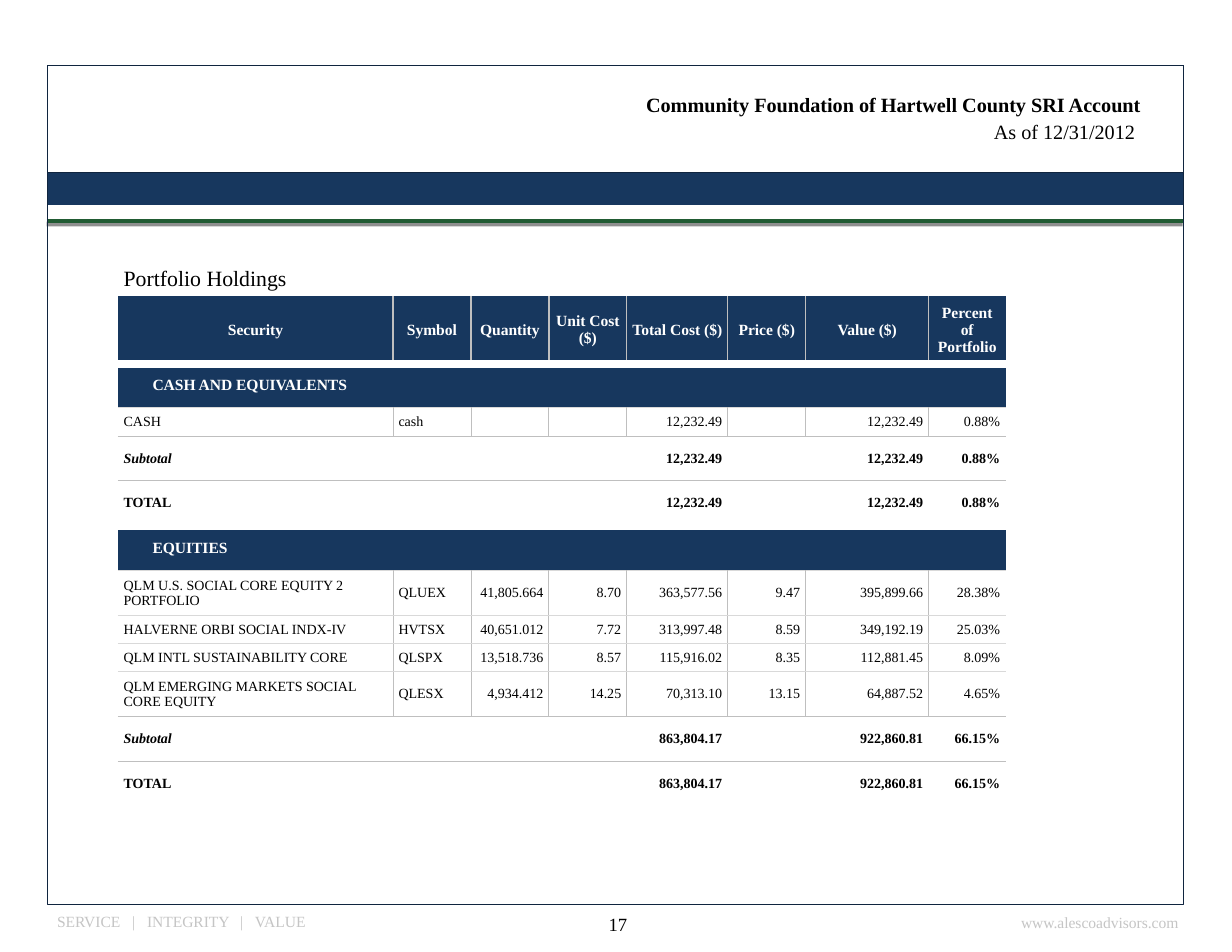
import pptx
import pptx.util
import pptx.dml.color
import pptx.enum.shapes
import pptx.enum.text
import pptx.oxml.ns
import lxml.etree

RGB = pptx.dml.color.RGBColor
ALIGN = pptx.enum.text.PP_ALIGN
ANCHOR = pptx.enum.text.MSO_ANCHOR
qn = pptx.oxml.ns.qn

NAVY = RGB(0x17, 0x37, 0x5E)
FRAME = RGB(0x10, 0x25, 0x3F)
GREEN = RGB(0x21, 0x5B, 0x33)
GREY = RGB(0xBF, 0xBF, 0xBF)
PALE = RGB(0xD9, 0xD9, 0xD9)
FOOTER = RGB(0xC5, 0xC5, 0xC5)
WHITE = RGB(0xFF, 0xFF, 0xFF)
BLACK = RGB(0, 0, 0)
FONT = "Times New Roman"

# Content: text, box (left, top, width, height), size, colour, bold, alignment, wrap
TEXTS = [
    ("As of 12/31/2012 ", (724, 114, 427, 36), 13, BLACK, False, ALIGN.RIGHT, True),
    ("17", (474, 907, 288, 50), 12, BLACK, False, ALIGN.CENTER, True),
    ("www.alescoadvisors.com", (1010, 907, 181, 30), 10, FOOTER, False, ALIGN.LEFT, False),
    ("SERVICE\t|\tINTEGRITY\t|\tVALUE", (46, 906, 276, 30), 10, FOOTER, False, ALIGN.LEFT, True),
    ("Community Foundation of Hartwell County SRI Account", (325, 87, 826, 36), 13, BLACK, True,
     ALIGN.RIGHT, True),
]
FOOTER_TABS = [75, 90, 183, 198]

# Rows: kind, height, values (Security, Symbol, Quantity, Unit Cost, Total Cost, Price, Value, Percent)
ROWS = [
    ("title", 37, ["Portfolio Holdings"]),
    ("header", 67, ["Security", "Symbol", "Quantity", "Unit Cost ($)", "Total Cost ($)", "Price ($)",
                    "Value ($)", "Percent of Portfolio"]),
    ("band", 44, ["CASH AND EQUIVALENTS"]),
    ("holding", 29, ["CASH", "cash", "", "", "12,232.49", "", "12,232.49", "0.88%"]),
    ("subtotal", 44, ["Subtotal", "", "", "", "12,232.49", "", "12,232.49", "0.88%"]),
    ("total", 45, ["TOTAL", "", "", "", "12,232.49", "", "12,232.49", "0.88%"]),
    ("band", 45, ["EQUITIES"]),
    ("holding", 45, ["QLM U.S. SOCIAL CORE EQUITY 2 PORTFOLIO", "QLUEX", "41,805.664", "8.70",
                     "363,577.56", "9.47", "395,899.66", "28.38%"]),
    ("holding", 28, ["HALVERNE ORBI SOCIAL INDX-IV", "HVTSX", "40,651.012", "7.72",
                     "313,997.48", "8.59", "349,192.19", "25.03%"]),
    ("holding", 28, ["QLM INTL SUSTAINABILITY CORE", "QLSPX", "13,518.736", "8.57",
                     "115,916.02", "8.35", "112,881.45", "8.09%"]),
    ("holding", 45, ["QLM EMERGING MARKETS SOCIAL CORE EQUITY", "QLESX", "4,934.412", "14.25",
                     "70,313.10", "13.15", "64,887.52", "4.65%"]),
    ("subtotal", 45, ["Subtotal", "", "", "", "863,804.17", "", "922,860.81", "66.15%"]),
    ("total", 45, ["TOTAL", "", "", "", "863,804.17", "", "922,860.81", "66.15%"]),
]
COLUMNS = [29, 246, 78, 78, 78, 101, 78, 123, 77]
LAST = len(COLUMNS) - 1
TABLE_LEFT, TABLE_TOP = 118, 259

# Row kind: size, text colour, bold, fill, vertical rule
STYLES = {
    "title": (14, BLACK, False, WHITE, None),
    "header": (10, WHITE, True, NAVY, (GREY, 1)),
    "band": (10, WHITE, True, NAVY, None),
    "holding": (9, BLACK, False, WHITE, (GREY, 0.5)),
    "subtotal": (9, BLACK, True, WHITE, None),
    "total": (9, BLACK, True, WHITE, None),
}
# First and last column merged in each row kind
SPANS = {"title": (0, LAST), "band": (1, LAST)}


def px(value):
    return round(value * 914400 / 112)


def add_run(para, text, size, color, bold=False, italic=False):
    span = para.add_run()
    span.text = text
    font = span.font
    font.name, font.size, font.bold, font.italic = FONT, pptx.util.Pt(size), bold, italic
    font.color.rgb = color


def add_panel(page, box, fill, line):
    panel = page.shapes.add_shape(pptx.enum.shapes.MSO_SHAPE.RECTANGLE, *map(px, box))
    panel.shadow.inherit = False
    if fill is None:
        panel.fill.background()
    else:
        panel.fill.solid()
        panel.fill.fore_color.rgb = fill
    panel.line.color.rgb = line
    panel.line.width = pptx.util.Pt(0.5)


def add_green_rule(page):
    rule = page.shapes.add_connector(pptx.enum.shapes.MSO_CONNECTOR.STRAIGHT,
                                     px(47), px(221), px(1183), px(221))
    rule.line.color.rgb = GREEN
    rule.line.width = pptx.util.Pt(3)
    effects = lxml.etree.SubElement(rule._element.spPr, qn("a:effectLst"))
    shadow = lxml.etree.SubElement(effects, qn("a:outerShdw"), blurRad="0", dist="25400",
                                   dir="5880000", algn="ctr", rotWithShape="0")
    color = lxml.etree.SubElement(shadow, qn("a:srgbClr"), val=str(BLACK))
    lxml.etree.SubElement(color, qn("a:alpha"), val="43000")


def add_text(page, text, box, size, color, bold, align, wrap):
    frame = page.shapes.add_textbox(*map(px, box)).text_frame
    frame.word_wrap = wrap
    para = frame.paragraphs[0]
    para.alignment = align
    if "\t" in text:
        tabs = lxml.etree.SubElement(para._p.get_or_add_pPr(), qn("a:tabLst"))
        for stop in FOOTER_TABS:
            lxml.etree.SubElement(tabs, qn("a:tab"), pos=str(px(stop)), algn="l")
    add_run(para, text, size, color, bold)


def rule_between(above, below):
    """Horizontal rule shared by two neighbouring rows."""
    if above in (None, "title"):
        return None
    if above in ("header", "total"):
        return WHITE, 6
    if "subtotal" in (above, below) or (above, below) == ("holding", "total"):
        return GREY, 0.5
    return PALE, 0.75


def set_borders(cell, **sides):
    properties = cell._tc.get_or_add_tcPr()
    for side in "LRTB":
        rule = sides[side]
        line = lxml.etree.SubElement(properties, qn("a:ln" + side))
        if rule is None:
            lxml.etree.SubElement(line, qn("a:noFill"))
            continue
        line.set("w", str(pptx.util.Pt(rule[1])))
        solid = lxml.etree.SubElement(line, qn("a:solidFill"))
        lxml.etree.SubElement(solid, qn("a:srgbClr"), val=str(rule[0]))


def add_holdings(page):
    heights = [height for _, height, _ in ROWS]
    kinds = [kind for kind, _, _ in ROWS]
    table = page.shapes.add_table(len(ROWS), len(COLUMNS), px(TABLE_LEFT), px(TABLE_TOP),
                                  px(sum(COLUMNS)), px(sum(heights))).table
    table.first_row = table.horz_banding = False
    for column, width in zip(table.columns, COLUMNS):
        column.width = px(width)

    for r, (kind, height, values) in enumerate(ROWS):
        table.rows[r].height = px(height)
        size, color, bold, fill, vertical = STYLES[kind]
        first, last = SPANS.get(kind, (0, 1))
        table.cell(r, first).merge(table.cell(r, last))
        top = rule_between(kinds[r - 1] if r else None, kind)
        bottom = rule_between(kind, kinds[r + 1] if r + 1 < len(kinds) else None)
        texts = {first: values[0], **dict(enumerate(values[1:], 2))}

        for c in range(len(COLUMNS)):
            cell = table.cell(r, c)
            cell.margin_left = cell.margin_right = pptx.util.Inches(0.05)
            cell.vertical_anchor = ANCHOR.BOTTOM if kind == "title" else ANCHOR.MIDDLE
            set_borders(cell, L=vertical if c > 1 else None, R=vertical if c < LAST else None,
                        T=top, B=bottom)
            cell.fill.solid()
            cell.fill.fore_color.rgb = fill
            para = cell.text_frame.paragraphs[0]
            if texts.get(c):
                if kind == "header":
                    para.alignment = ALIGN.CENTER
                elif c > 2:
                    para.alignment = ALIGN.RIGHT
                add_run(para, texts[c], size, color, bold, kind == "subtotal" and c == 0)
            else:
                # Keeps empty cells from stretching the row
                lxml.etree.SubElement(para._p, qn("a:endParaRPr"), sz=str(size * 100))


def main():
    deck = pptx.Presentation()
    deck.slide_width, deck.slide_height = px(1232), px(952)
    page = deck.slides.add_slide(deck.slide_layouts[6])

    # Frame and header band
    add_panel(page, (47, 172, 1136, 32), NAVY, NAVY)
    add_green_rule(page)
    add_panel(page, (47, 65, 1136, 839), None, FRAME)
    add_panel(page, (47, 65, 1136, 107), WHITE, FRAME)

    # Heading and footer
    for entry in TEXTS:
        add_text(page, *entry)

    # Holdings table
    add_holdings(page)
    deck.save("out.pptx")


if __name__ == "__main__":
    main()
